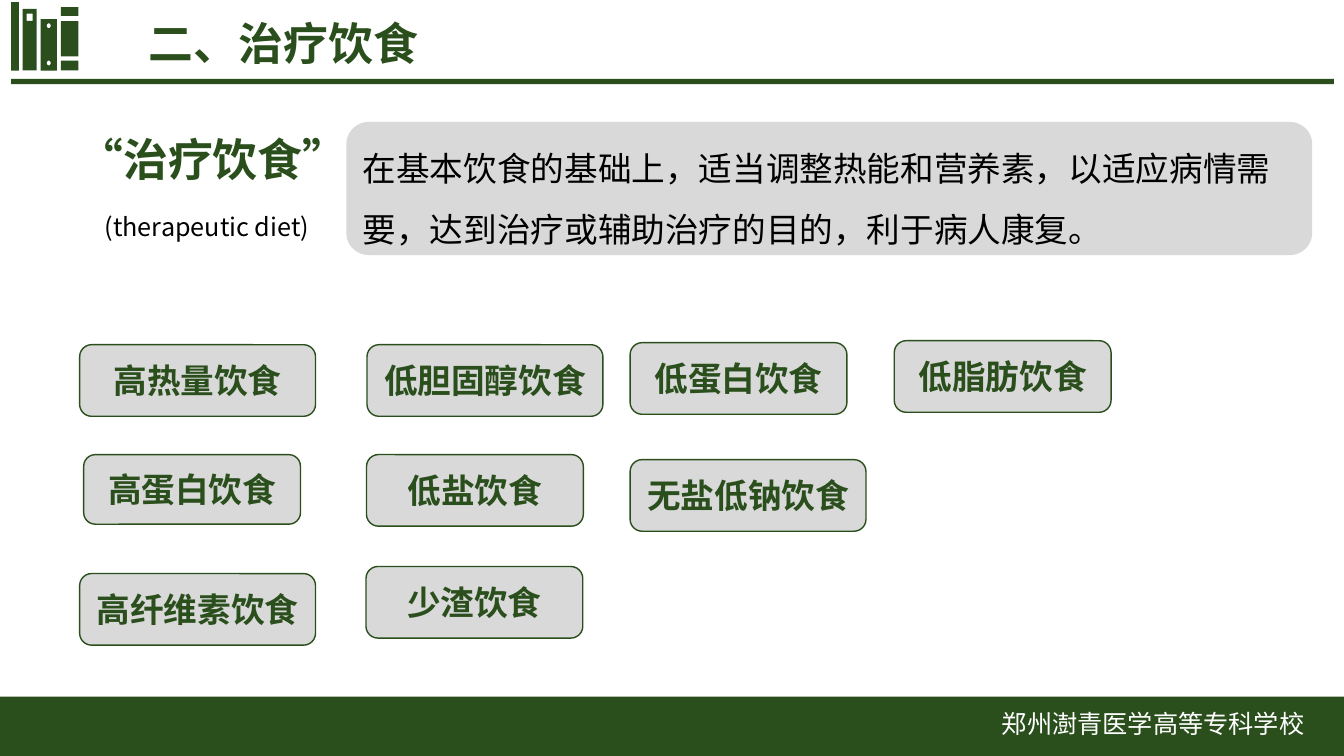
from math import cos, pi, sin

from lxml import etree
from pptx import Presentation
from pptx.dml.color import RGBColor
from pptx.enum.shapes import MSO_SHAPE
from pptx.enum.text import MSO_ANCHOR, MSO_AUTO_SIZE, PP_ALIGN
from pptx.oxml.ns import qn
from pptx.util import Inches, Pt

RECTANGLE, ROUNDED = MSO_SHAPE.RECTANGLE, MSO_SHAPE.ROUNDED_RECTANGLE
LEFT, CENTER = PP_ALIGN.LEFT, PP_ALIGN.CENTER
TOP, MIDDLE = MSO_ANCHOR.TOP, MSO_ANCHOR.MIDDLE
FIT_SHAPE = MSO_AUTO_SIZE.SHAPE_TO_FIT_TEXT

COLORS = {"green": "2A4F1C", "gray": "D9D9D9", "black": "000000", "white": "FFFFFF"}
CHINESE_FONT, LATIN_FONT = "Noto Sans CJK SC", "Arial"
SLIDE = (0, 0, 13.33, 7.5)

HEADING = {"size": Pt(32), "bold": True, "name": CHINESE_FONT, "color": "green"}
TERM = {**HEADING, "name": LATIN_FONT}
LABEL = {**TERM, "size": Pt(24)}
BODY = {"size": Pt(24), "bold": False, "name": CHINESE_FONT, "color": "black"}
SMALL = {**BODY, "size": Pt(18)}
FOOTER = {**SMALL, "color": "white"}

WIDE, NARROW = (22.87, 23.51), (21.02, 23.51)
LOW = (21.02, 22.85)
DIET_COLUMNS = {
    0: [("高热量饮食", 0, 1.32, WIDE), ("高蛋白饮食", 0.39, 37.42, LOW),
        ("高纤维素饮食", 0, 76.49, WIDE)],
    27.86: [("低胆固醇饮食", 0, 1.32, WIDE), ("低盐饮食", -0.05, 37.42, NARROW),
            ("少渣饮食", -0.1, 74.17, NARROW)],
    53.37: [("低蛋白饮食", 0, 0.66, NARROW), ("无盐低钠饮食", 0, 39.07, WIDE)],
    78.98: [("低脂肪饮食", 0, 0, NARROW)],
}


def part(box, left, top, width, height):
    """Return the part of a box given in percent of its sides."""
    x, y, w, h = box
    return x + w * left / 100, y + h * top / 100, w * width / 100, h * height / 100


def rgb(color):
    """Look up a named color."""
    return RGBColor.from_string(COLORS[color])


def paint(shape, fill, line=None):
    """Give a shape a flat fill and an optional thin outline."""
    shape.shadow.inherit = False
    shape.fill.solid()
    shape.fill.fore_color.rgb = rgb(fill)
    if line:
        shape.line.color.rgb = rgb(line)
        shape.line.width = Pt(1)
    else:
        shape.line.fill.background()


def add_block(slide, box, kind=RECTANGLE, fill="green", line=None):
    """Add a painted preset shape filling the box."""
    shape = slide.shapes.add_shape(kind, *map(Inches, box))
    paint(shape, fill, line)
    return shape


def write(shape, text, style, align=LEFT, anchor=TOP, wrap=True, spacing=None):
    """Set the text of a shape as one styled paragraph."""
    frame = shape.text_frame
    frame.word_wrap = wrap
    frame.vertical_anchor = anchor
    if not wrap:
        frame.auto_size = FIT_SHAPE
    paragraph = frame.paragraphs[0]
    paragraph.alignment = align
    paragraph.line_spacing = spacing
    run = paragraph.add_run()
    run.text = text
    run.font.color.rgb = rgb(style["color"])
    for attribute in ("size", "bold", "name"):
        setattr(run.font, attribute, style[attribute])
    east_asian = etree.SubElement(run.font._element, qn("a:ea"))
    east_asian.set("typeface", CHINESE_FONT)


def add_text(slide, box, text, style, **options):
    """Add a text box filling the box."""
    write(slide.shapes.add_textbox(*map(Inches, box)), text, style, **options)


def corners(box):
    """List the corners of a box in whole EMU."""
    x, y, w, h = map(Inches, box)
    return [(x, y), (x + w, y), (x + w, y + h), (x, y + h)]


def circle(box, steps=24):
    """List points in EMU round the ellipse inside a box."""
    x, y, w, h = map(Inches, box)
    angles = [-2 * pi * step / steps for step in range(steps)]
    return [(x + w * (1 + cos(a)) / 2, y + h * (1 + sin(a)) / 2) for a in angles]


def add_book(slide, box, holes):
    """Add a book spine with holes cut out of it."""
    outline = corners(box)
    builder = slide.shapes.build_freeform(*outline[0])
    builder.add_line_segments(outline[1:], close=True)
    for hole in holes:
        builder.move_to(*hole[0])
        builder.add_line_segments(hole[1:], close=True)
    paint(builder.convert_to_shape(), "green")


def add_books_icon(slide, box):
    """Draw the row of books."""
    add_block(slide, part(box, 0, 0, 11.5, 100))
    for top, height in ((7.4, 13), (28, 51.5), (85.5, 14.5)):
        add_block(slide, part(box, 74, top, 26, height))
    thin_book = part(box, 17, 10, 21, 90)
    add_book(slide, thin_book, [corners(part(thin_book, 29, 8, 43, 11.5))])
    short_book = part(box, 44, 25, 24, 75)
    holes = [circle(part(short_book, 37.5, top, 25, 9.4)) for top in (8, 80.6)]
    add_book(slide, short_book, holes)


def add_header(slide, box):
    """Draw the icon, the title and the rule below them."""
    add_block(slide, part(box, 0.83, 93.2, 98.42, 6.2))
    add_books_icon(slide, part(box, 0.83, 2.38, 5, 80.95))
    add_text(slide, part(box, 10.35, 13.1, 27.23, 75), "二、治疗饮食", HEADING)


def add_definition(slide, box):
    """Draw the term and the panel that defines it."""
    add_text(slide, part(box, 0, 3.8, 23.42, 48.5), "“治疗饮食”", TERM, wrap=False)
    panel = add_block(slide, part(box, 22.33, 0, 77.63, 100), ROUNDED, "gray")
    write(panel, "在基本饮食的基础上，适当调整热能和营养素，以适应病情需要，"
          "达到治疗或辅助治疗的目的，利于病人康复。", BODY, anchor=MIDDLE, spacing=1.5)
    add_text(slide, part(box, 2.11, 63.6, 19.21, 30.3), "(therapeutic diet)", SMALL,
             wrap=False)


def add_diets(slide, box):
    """Draw the labels of the diets column by column."""
    for left, diets in DIET_COLUMNS.items():
        for name, shift, top, size in diets:
            place = part(box, left + shift, top, *size)
            label = add_block(slide, place, ROUNDED, "gray", "green")
            write(label, name, LABEL, align=CENTER, anchor=MIDDLE)


def add_footer(slide, box):
    """Draw the band with the name of the school."""
    add_block(slide, box)
    add_text(slide, part(box, 71.62, 11.9, 28.36, 78), "郑州澍青医学高等专科学校",
             FOOTER, align=CENTER)


def main():
    """Build and save the slide."""
    presentation = Presentation()
    presentation.slide_width, presentation.slide_height = map(Inches, SLIDE[2:])
    slide = presentation.slides.add_slide(presentation.slide_layouts[6])
    add_header(slide, part(SLIDE, 0, 0, 100, 11.2))
    add_definition(slide, part(SLIDE, 5.1, 16.13, 92.57, 17.6))
    add_diets(slide, part(SLIDE, 5.93, 45.07, 76.74, 40.27))
    add_footer(slide, part(SLIDE, 0, 92.13, 100, 7.87))
    presentation.save("out.pptx")


if __name__ == "__main__":
    main()
